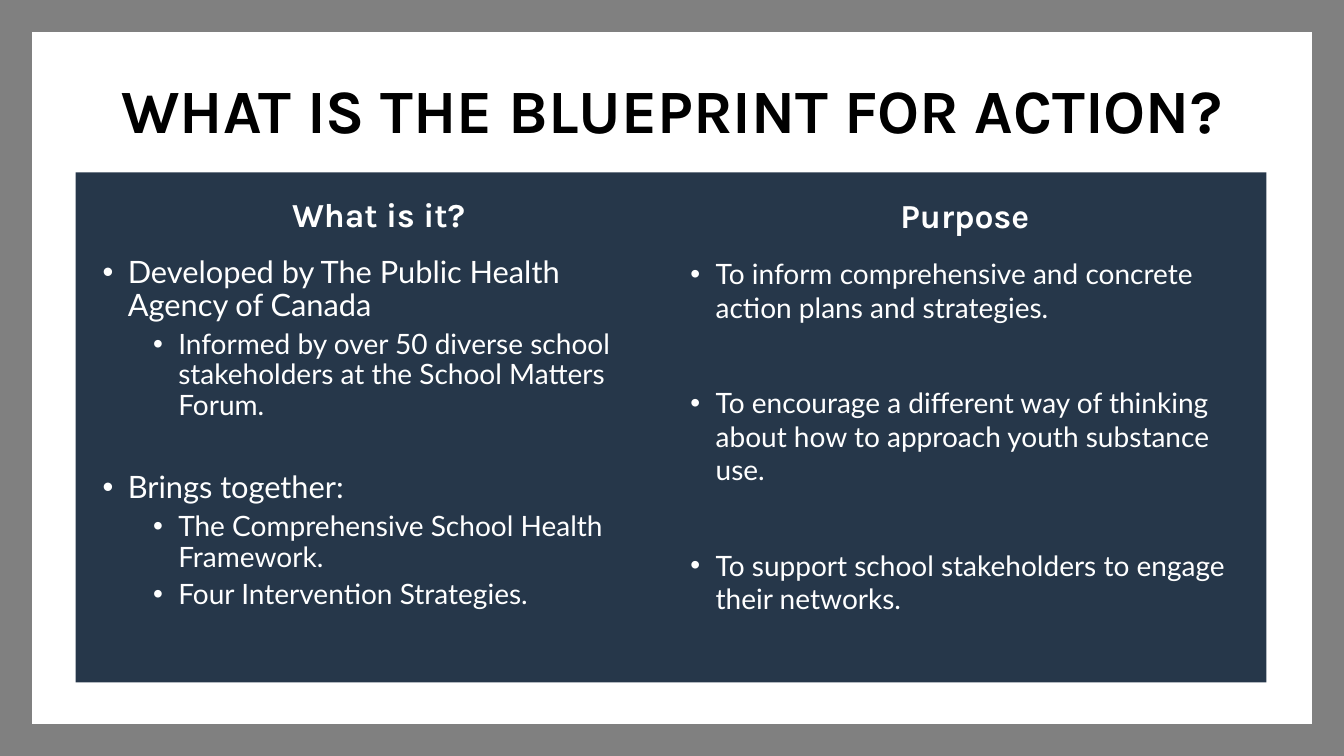
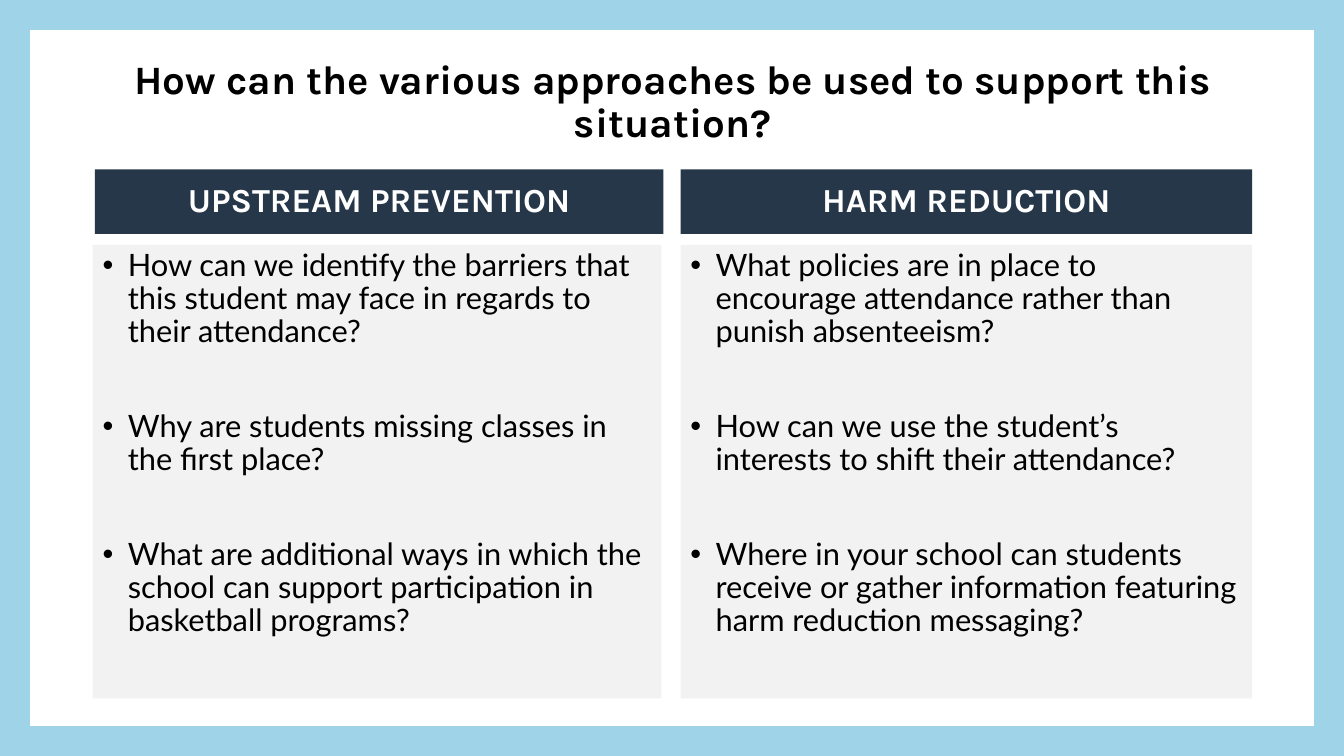
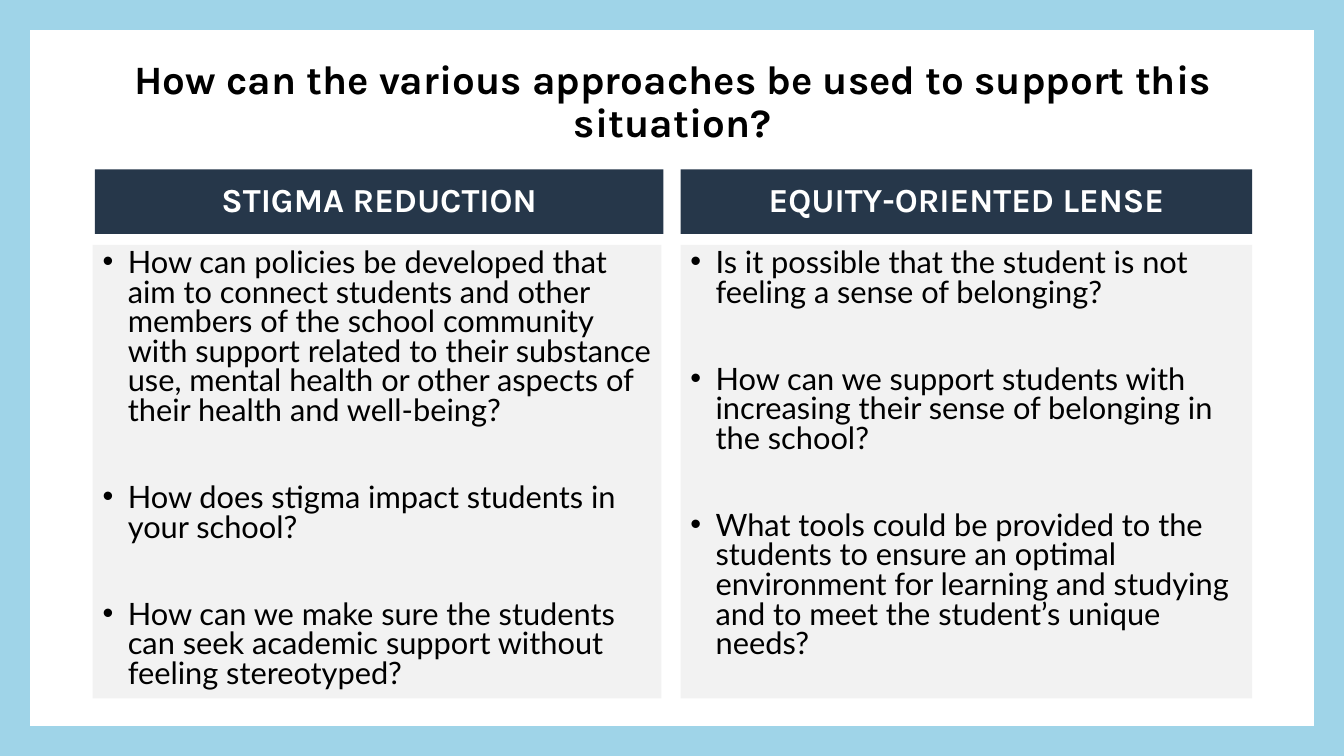
from lxml import etree
from pptx import Presentation
from pptx import util as u
from pptx.dml.color import RGBColor
from pptx.enum import shapes, text
from pptx.oxml.ns import qn

NAVY, GREY, BLUE, PALE = "26374A", "808080", "9FD4E8", "F2F2F2"
BLACK, WHITE = "000000", "FFFFFF"
HEAD_FONT, BODY_FONT = "Karla", "Lato"


def color(value):
    return RGBColor.from_string(value)


class Deck:
    """Holds the presentation, its style and the current slide."""

    def __init__(self):
        self.presentation = Presentation()
        self.presentation.slide_width = u.Inches(13.33)
        self.presentation.slide_height = u.Inches(7.5)
        self.slide = None

    def new_slide(self):
        self.slide = self.presentation.slides.add_slide(self.presentation.slide_layouts[6])

    def shape(self, kind, area, fill):
        shape = self.slide.shapes.add_shape(kind, *map(u.Inches, area))
        shape.shadow.inherit = False
        shape.fill.solid()
        shape.fill.fore_color.rgb = color(fill)
        shape.line.fill.background()
        return shape

    def panel(self, area, fill):
        return self.shape(shapes.MSO_SHAPE.RECTANGLE, area, fill)

    def frame(self, fill, overhang, outlined=False):
        size = (13.33 + 2 * overhang, 7.5 + 2 * overhang)
        frame = self.shape(shapes.MSO_SHAPE.FRAME, (-overhang, -overhang, *size), fill)
        frame.adjustments[0] = 0.042
        if outlined:
            frame.line.color.rgb = color(fill)
            frame.line.width = u.Pt(1)

    def text_frame(self, area, fill, anchor):
        """Open a filled panel, or a plain text box when there is no fill."""
        if fill:
            box = self.panel(area, fill)
        else:
            box = self.slide.shapes.add_textbox(*map(u.Inches, area))
        box.text_frame.word_wrap = True
        box.text_frame.vertical_anchor = anchor
        return box.text_frame

    def style(self, paragraph, font, size, ink, spacing, before, align, bold=False):
        paragraph.font.name = font
        paragraph.font.size = u.Pt(size)
        paragraph.font.bold = bold
        paragraph.font.color.rgb = color(ink)
        paragraph.line_spacing = spacing
        paragraph.space_before = u.Pt(before)
        paragraph.alignment = align

    def heading(self, words, area, size=24, ink=WHITE, fill=None,
                anchor=text.MSO_ANCHOR.MIDDLE):
        paragraph = self.text_frame(area, fill, anchor).paragraphs[0]
        paragraph.text = words
        self.style(paragraph, HEAD_FONT, size, ink, 0.9, 0, text.PP_ALIGN.CENTER, True)

    def bullets(self, items, area, ink=BLACK, fill=None, spacing=0.9):
        """Each item is (words, level, size, space before)."""
        frame = self.text_frame(area, fill, text.MSO_ANCHOR.TOP)
        for index, (words, level, size, before) in enumerate(items):
            paragraph = frame.add_paragraph() if index else frame.paragraphs[0]
            paragraph.text = words
            paragraph.level = level
            self.style(paragraph, BODY_FONT, size, ink, spacing, before, text.PP_ALIGN.LEFT)
            properties = paragraph._p.get_or_add_pPr()
            properties.set("marL", str(u.Inches(0.25 + 0.5 * level)))
            properties.set("indent", str(u.Inches(-0.25)))
            font = etree.Element(qn("a:buFont"), typeface="Arial")
            mark = etree.Element(qn("a:buChar"), char="•")
            at = properties.index(properties.find(qn("a:defRPr")))
            properties[at:at] = [font, mark]


def spaced(lines, size, gap):
    """Top-level bullets with the same wide gap between them."""
    return [(line, 0, size, gap if index else 10) for index, line in enumerate(lines)]


def blueprint_slide(deck):
    deck.new_slide()
    deck.panel((0.75, 1.71, 11.81, 5.06), NAVY)
    deck.heading("WHAT IS THE BLUEPRINT FOR ACTION?", (0.92, 0.4, 11.5, 1.45), 44, BLACK)

    # Left column
    bottom = text.MSO_ANCHOR.BOTTOM
    deck.heading("What is it?", (0.92, 1.84, 5.67, 0.54), anchor=bottom)
    deck.bullets([
        ("Developed by The Public Health Agency of Canada", 0, 22, 10),
        ("Informed by over 50 diverse school stakeholders at the School Matters Forum.",
         1, 20, 5),
        ("Brings together:", 0, 22, 36.6),
        ("The Comprehensive School Health Framework.", 1, 20, 5),
        ("Four Intervention Strategies.", 1, 20, 5),
    ], (0.92, 2.5, 5.67, 4.27), WHITE)

    # Right column
    deck.heading("Purpose", (6.75, 1.85, 5.64, 0.54), anchor=bottom)
    deck.bullets(spaced([
        "To inform comprehensive and concrete action plans and strategies.",
        "To encourage a different way of thinking about how to approach youth substance use.",
        "To support school stakeholders to engage their networks.",
    ], 20, 44), (6.75, 2.5, 5.64, 4.27), WHITE, spacing=1.0)
    deck.frame(GREY, 0.01, outlined=True)


def approaches_slide(deck, columns, spacing, gap):
    deck.new_slide()
    deck.heading("How can the various approaches be used to support this situation?",
                 (0.92, 0.57, 11.5, 0.9), 28.8, BLACK)
    places = ((0.94, 0.92, 5.64), (6.75, 6.75, 5.67))
    for (head_left, body_left, width), (name, questions) in zip(places, columns):
        deck.heading(name, (head_left, 1.68, width, 0.64), fill=NAVY)
        deck.bullets(spaced(questions, 22, gap), (body_left, 2.43, width, 4.5),
                     fill=PALE, spacing=spacing)
    deck.frame(BLUE, 0.02)


PREVENTION_AND_HARM = [
    ("UPSTREAM PREVENTION", [
        "How can we identify the barriers that this student may face in regards to "
        "their attendance?",
        "Why are students missing classes in the first place?",
        "What are additional ways in which the school can support participation in "
        "basketball programs?",
    ]),
    ("HARM REDUCTION", [
        "What policies are in place to encourage attendance rather than punish absenteeism?",
        "How can we use the student’s interests to shift their attendance?",
        "Where in your school can students receive or gather information featuring "
        "harm reduction messaging?",
    ]),
]
STIGMA_AND_EQUITY = [
    ("STIGMA REDUCTION", [
        "How can policies be developed that aim to connect students and other members of "
        "the school community with support related to their substance use, mental health "
        "or other aspects of their health and well-being?",
        "How does stigma impact students in your school?",
        "How can we make sure the students can seek academic support without feeling "
        "stereotyped?",
    ]),
    ("EQUITY-ORIENTED LENSE", [
        "Is it possible that the student is not feeling a sense of belonging?",
        "How can we support students with increasing their sense of belonging in the school?",
        "What tools could be provided to the students to ensure an optimal environment for "
        "learning and studying and to meet the student’s unique needs?",
    ]),
]


def main():
    deck = Deck()
    blueprint_slide(deck)
    approaches_slide(deck, PREVENTION_AND_HARM, 0.9, 43.8)
    approaches_slide(deck, STIGMA_AND_EQUITY, 0.8, 41.1)
    deck.presentation.save("out.pptx")


if __name__ == "__main__":
    main()
